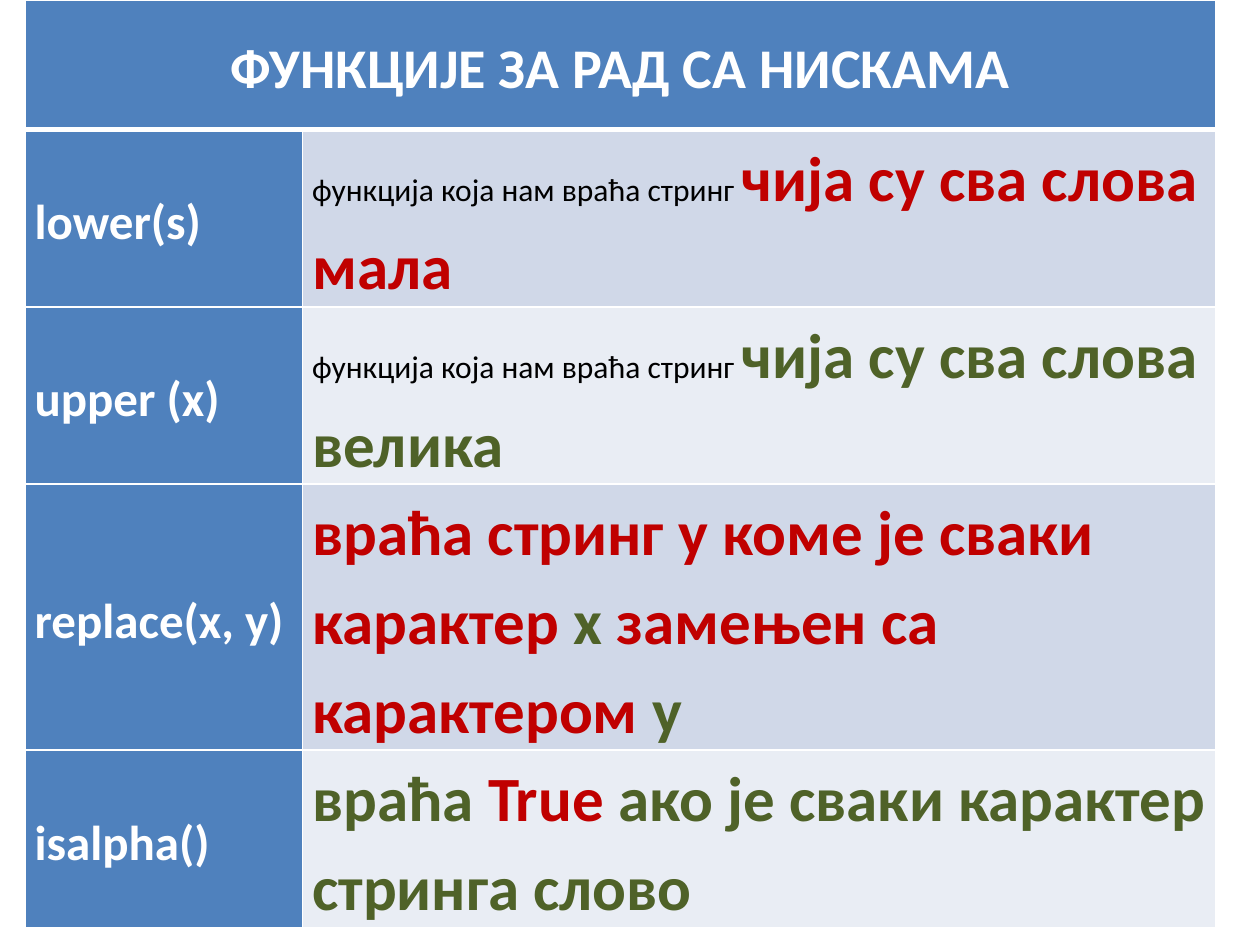
"""Build a slide with a table of string functions."""
import pptx
import pptx.dml.color
import pptx.enum.text
import pptx.oxml
import pptx.oxml.ns
import pptx.util
from lxml import etree

Pt = pptx.util.Pt
RGBColor = pptx.dml.color.RGBColor

WHITE = RGBColor(0xFF, 0xFF, 0xFF)
BLACK = RGBColor(0, 0, 0)
BLUE = RGBColor(0x4F, 0x81, 0xBD)
RED = RGBColor(0xC0, 0, 0)
GREEN = RGBColor(0x4F, 0x62, 0x28)
BANDS = (RGBColor(0xD0, 0xD8, 0xE8), RGBColor(0xE9, 0xED, 0xF4))

TITLE = "ФУНКЦИЈЕ ЗА РАД СА НИСКАМА"
INTRO = ("функција која нам враћа стринг ", BLACK)
FUNCTIONS = [
    ("lower(s)", [INTRO, ("чија су сва слова мала", RED)]),
    ("upper (x)", [INTRO, ("чија су сва слова велика", GREEN)]),
    ("replace(x, y)", [("враћа стринг у коме је сваки карактер ", RED), ("x", GREEN),
                       (" замењен са карактером ", RED), ("y", GREEN)]),
    ("isalpha()", [("враћа ", GREEN), ("True ", RED),
                   ("ако је сваки карактер стринга слово", GREEN)]),
]
COLUMN_WIDTHS = (158.6, 521.6)
TITLE_HEIGHT = 74
ROW_HEIGHT = 86.4


def set_borders(cell, bottom_width=1):
    """Draw white lines on all four sides of a cell."""
    properties = cell._tc.get_or_add_tcPr()
    widths = {"a:lnL": 1, "a:lnR": 1, "a:lnT": 1, "a:lnB": bottom_width}
    for position, (tag, width) in enumerate(widths.items()):
        line = etree.Element(pptx.oxml.ns.qn(tag), w=str(Pt(width)))
        fill = etree.SubElement(line, pptx.oxml.ns.qn("a:solidFill"))
        etree.SubElement(fill, pptx.oxml.ns.qn("a:srgbClr"), val=str(WHITE))
        properties.insert(position, line)


def format_cell(cell, color, bottom_width=1):
    """Set the fill, margins, anchor and borders of a cell and return its paragraph."""
    cell.fill.solid()
    cell.fill.fore_color.rgb = color
    cell.margin_left = cell.margin_right = Pt(5.4)
    cell.margin_top = cell.margin_bottom = 0
    cell.vertical_anchor = pptx.enum.text.MSO_ANCHOR.MIDDLE
    set_borders(cell, bottom_width)
    paragraph = cell.text_frame.paragraphs[0]
    paragraph.line_spacing = 1.15
    paragraph.font.name = "Calibri"
    return paragraph


def write_heading(cell, text, size, bottom_width=1):
    """Write bold white text on blue and return its paragraph."""
    paragraph = format_cell(cell, BLUE, bottom_width)
    paragraph.add_run().text = text
    paragraph.font.size = Pt(size)
    paragraph.font.bold = True
    paragraph.font.color.rgb = WHITE
    return paragraph


def write_description(cell, parts, color):
    """Write coloured runs, the black ones small and the others large and bold."""
    paragraph = format_cell(cell, color)
    for text, text_color in parts:
        run = paragraph.add_run()
        run.text = text
        run.font.size = Pt(18 if text_color == BLACK else 36)
        run.font.bold = text_color != BLACK
        run.font.color.rgb = text_color


def add_function_table(slide):
    """Add the table with a merged title row and one row for each function."""
    row_count = len(FUNCTIONS) + 1
    height = TITLE_HEIGHT + ROW_HEIGHT * len(FUNCTIONS)
    table = slide.shapes.add_table(row_count, 2, Pt(14.4), 0,
                                   Pt(sum(COLUMN_WIDTHS)), Pt(height)).table
    for column, width in zip(table.columns, COLUMN_WIDTHS):
        column.width = Pt(width)
    for index, row in enumerate(table.rows):
        row.height = Pt(ROW_HEIGHT if index else TITLE_HEIGHT)

    table.cell(0, 0).merge(table.cell(0, 1))
    title = write_heading(table.cell(0, 0), TITLE, 32, bottom_width=3)
    title.alignment = pptx.enum.text.PP_ALIGN.CENTER
    for index, (name, parts) in enumerate(FUNCTIONS):
        write_heading(table.cell(index + 1, 0), name, 28)
        write_description(table.cell(index + 1, 1), parts, BANDS[index % 2])


def main():
    """Create and save the presentation."""
    presentation = pptx.Presentation()
    presentation.slide_width = Pt(720)
    presentation.slide_height = Pt(540)
    slide = presentation.slides.add_slide(presentation.slide_layouts[6])
    add_function_table(slide)
    presentation.save("out.pptx")


if __name__ == "__main__":
    main()
